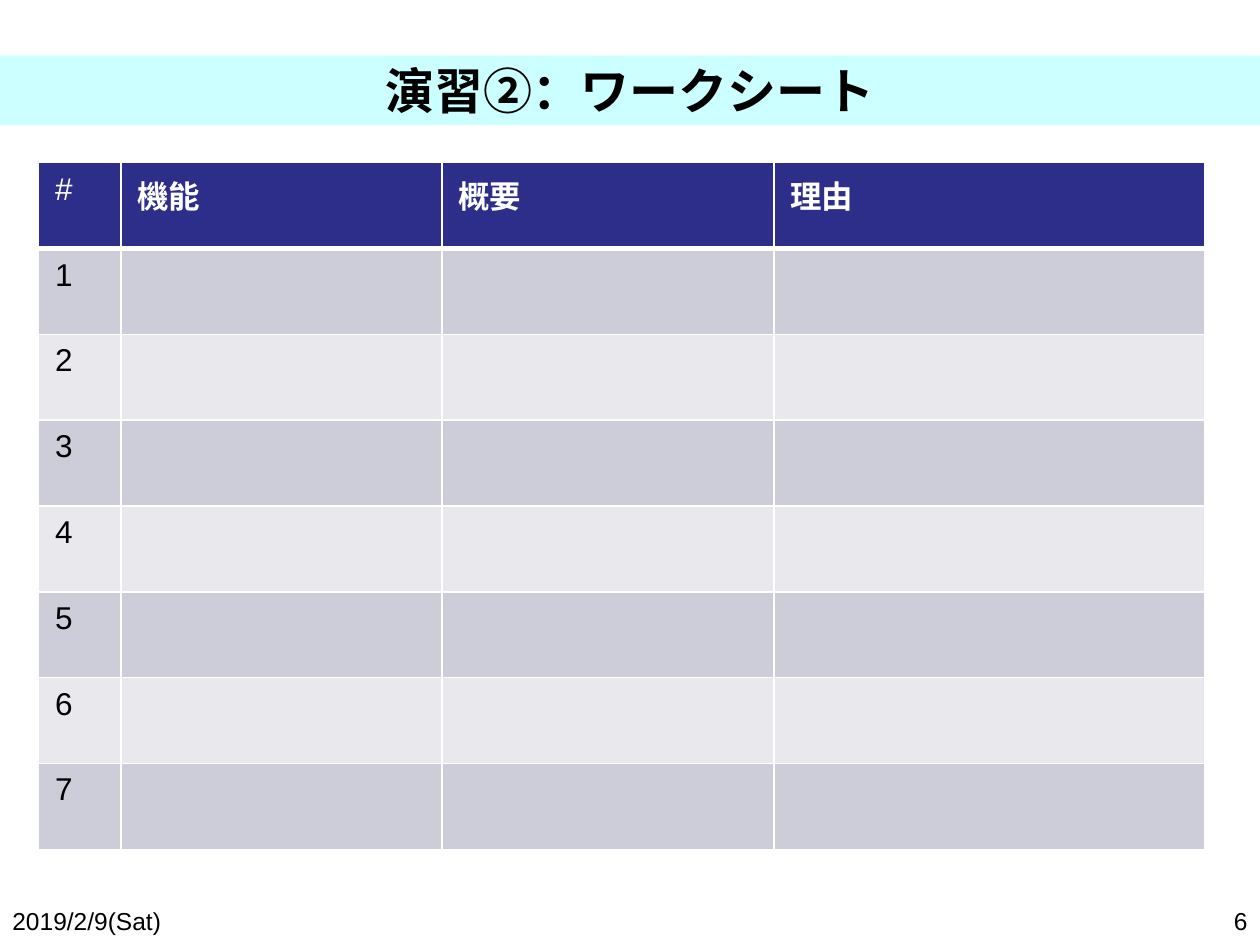
from pptx import Presentation
from pptx.dml.color import RGBColor
from pptx.enum.shapes import MSO_SHAPE
from pptx.enum.text import MSO_ANCHOR, PP_ALIGN
from pptx.oxml.ns import qn
from pptx.util import Cm, Pt
from lxml import etree

RECT = MSO_SHAPE.RECTANGLE
MIDDLE = MSO_ANCHOR.MIDDLE
LEFT, CENTER, RIGHT = PP_ALIGN.LEFT, PP_ALIGN.CENTER, PP_ALIGN.RIGHT

BLACK = RGBColor(0x00, 0x00, 0x00)
WHITE = RGBColor(0xFF, 0xFF, 0xFF)
CYAN = RGBColor(0xCC, 0xFF, 0xFF)
NAVY = RGBColor(0x2D, 0x2D, 0x8A)
BAND_DARK = RGBColor(0xCD, 0xCD, 0xDA)
BAND_LIGHT = RGBColor(0xE8, 0xE8, 0xED)

HEADERS = ["#", "機能", "概要", "理由"]
COL_WIDTHS = [1.66, 6.47, 6.69, 8.69]
ROW_HEIGHT = 1.73
ITEMS = 7


def write(tf, text, size, color, bold=False, align=LEFT):
    p = tf.paragraphs[0]
    p.alignment = align
    r = p.add_run()
    r.text = text
    r.font.name = "Arial"
    r.font.size = Pt(size)
    r.font.bold = bold
    r.font.color.rgb = color


def add_borders(cell, widths):
    """Draw white cell borders; widths maps a side (L, R, T, B) to points."""
    tcPr = cell._tc.get_or_add_tcPr()
    for i, (side, width) in enumerate(widths.items()):
        ln = etree.Element(qn(f"a:ln{side}"), w=str(Pt(width)))
        fill = etree.SubElement(ln, qn("a:solidFill"))
        etree.SubElement(fill, qn("a:srgbClr"), val=str(WHITE))
        tcPr.insert(i, ln)


prs = Presentation()
prs.slide_width, prs.slide_height = Cm(25.4), Cm(19.05)
s = prs.slides.add_slide(prs.slide_layouts[6])

# Title band
sp = s.shapes.add_shape(RECT, 0, Cm(1.12), prs.slide_width, Cm(1.4))
sp.shadow.inherit = False
sp.fill.solid()
sp.fill.fore_color.rgb = CYAN
sp.line.fill.background()
sp.text_frame.vertical_anchor = MIDDLE
write(sp.text_frame, "演習②：ワークシート", 28, BLACK, True, CENTER)

# Worksheet table
table = s.shapes.add_table(ITEMS + 1, len(HEADERS), Cm(0.78), Cm(3.28),
                           Cm(sum(COL_WIDTHS)), Cm(ROW_HEIGHT * (ITEMS + 1))).table
for col, width in zip(table.columns, COL_WIDTHS):
    col.width = Cm(width)
for i, row in enumerate(table.rows):
    row.height = Cm(ROW_HEIGHT)
    for j, cell in enumerate(row.cells):
        cell.margin_left = cell.margin_right = Cm(0.33)
        cell.margin_top = cell.margin_bottom = Cm(0.18)
        cell.fill.solid()
        if i == 0:
            cell.fill.fore_color.rgb = NAVY
            write(cell.text_frame, HEADERS[j], 18, WHITE, bold=j > 0)
        else:
            cell.fill.fore_color.rgb = BAND_DARK if i % 2 else BAND_LIGHT
            if j == 0:
                write(cell.text_frame, str(i), 18, BLACK)
        add_borders(cell, {"L": 1, "R": 1, "T": 3 if i == 1 else 1, "B": 3 if i == 0 else 1})

# Footer: date and page number
for text, left, width, align in [("2019/2/9(Sat)", 0, 6, LEFT), ("6", 22.5, 2.9, RIGHT)]:
    tf = s.shapes.add_textbox(Cm(left), Cm(18.14), Cm(width), Cm(0.91)).text_frame
    tf.word_wrap = True
    write(tf, text, 14, BLACK, align=align)

prs.save("out.pptx")
